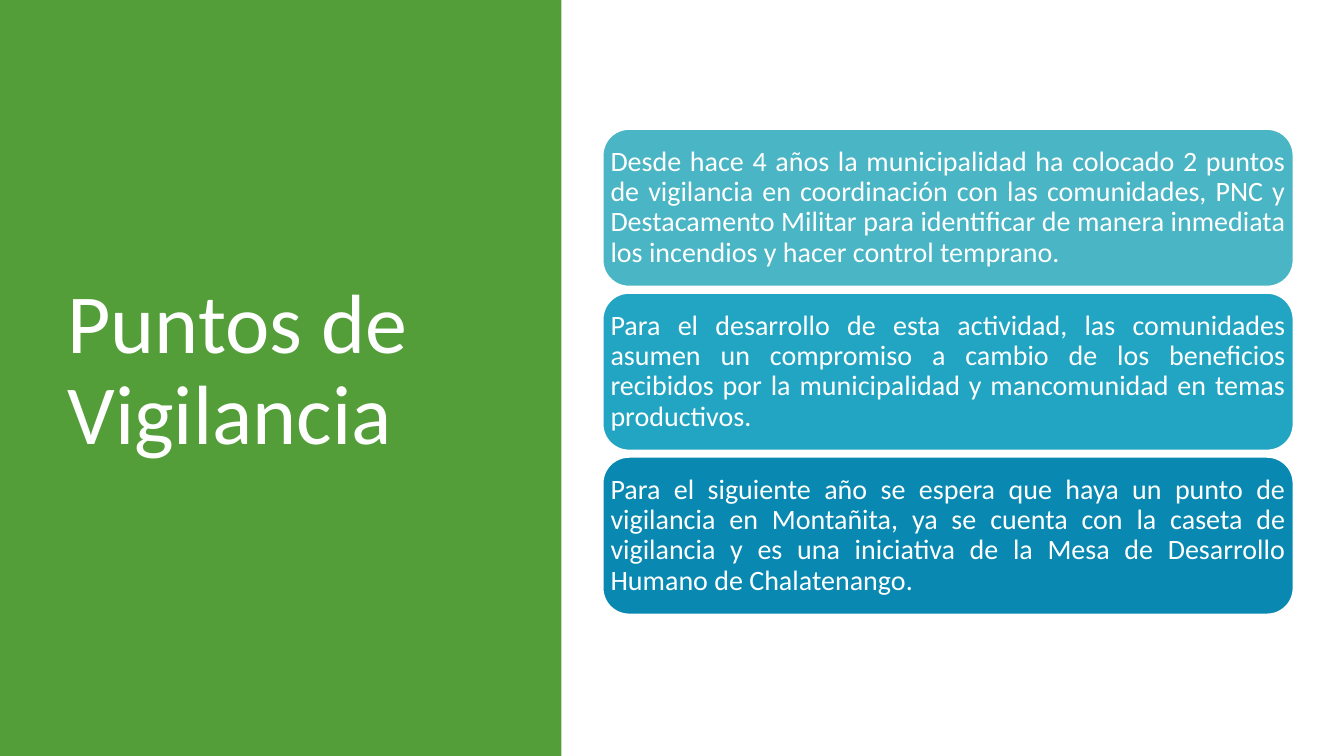
"""Build the slide on surveillance points: green title panel and three rounded cards."""
import pptx
import pptx.util
import pptx.dml.color
import pptx.enum.shapes
import pptx.enum.text

Pt = pptx.util.Pt
SHAPE = pptx.enum.shapes.MSO_SHAPE
ALIGN = pptx.enum.text.PP_ALIGN


def rgb(value):
    return pptx.dml.color.RGBColor.from_string(value)


def write(sp, text, size, align, margin_x, margin_y, color="FFFFFF", font="Calibri"):
    tf = sp.text_frame
    tf.word_wrap = True
    tf.auto_size = pptx.enum.text.MSO_AUTO_SIZE.NONE
    tf.vertical_anchor = pptx.enum.text.MSO_ANCHOR.MIDDLE
    tf.margin_left = tf.margin_right = Pt(margin_x)
    tf.margin_top = tf.margin_bottom = Pt(margin_y)
    p = tf.paragraphs[0]
    p.alignment = align
    p.line_spacing = 0.9
    r = p.add_run()
    r.text = text
    r.font.size = Pt(size)
    r.font.name = font
    r.font.color.rgb = rgb(color)


prs = pptx.Presentation()
prs.slide_width, prs.slide_height = Pt(960), Pt(540)
s = prs.slides.add_slide(prs.slide_layouts[5])

title = s.shapes.title
title.left, title.top, title.width, title.height = Pt(41), Pt(49), Pt(299.5), Pt(433.5)
write(title, "Puntos de Vigilancia", size=60, align=ALIGN.LEFT, margin_x=7.2, margin_y=3.6)

panel = s.shapes.add_shape(SHAPE.RECTANGLE, 0, 0, Pt(401), prs.slide_height)
panel.shadow.inherit = False
panel.fill.solid()
panel.fill.fore_color.rgb = rgb("549E39")
panel.line.fill.background()
title._element.addprevious(panel._element)

cards = [
    ("4AB5C4", "Desde hace 4 años la municipalidad ha colocado 2 puntos de vigilancia en "
     "coordinación con las comunidades, PNC y Destacamento Militar para identificar de "
     "manera inmediata los incendios y hacer control temprano."),
    ("22A5C2", "Para el desarrollo de esta actividad, las comunidades asumen un compromiso "
     "a cambio de los beneficios recibidos por la municipalidad y mancomunidad en temas "
     "productivos."),
    ("0989B1", "Para el siguiente año se espera que haya un punto de vigilancia en Montañita, "
     "ya se cuenta con la caseta de vigilancia y es una iniciativa de la Mesa de Desarrollo "
     "Humano de Chalatenango."),
]
for i, (fill, text) in enumerate(cards):
    sp = s.shapes.add_shape(SHAPE.ROUNDED_RECTANGLE, Pt(430.6), Pt(92.3 + 117.1 * i),
                            Pt(493.2), Pt(112.3))
    sp.shadow.inherit = False
    sp.fill.solid()
    sp.fill.fore_color.rgb = rgb(fill)
    sp.line.color.rgb = rgb("FFFFFF")
    sp.line.width = Pt(1)
    write(sp, text, size=20, align=ALIGN.JUSTIFY, margin_x=0, margin_y=0)

prs.save("out.pptx")
